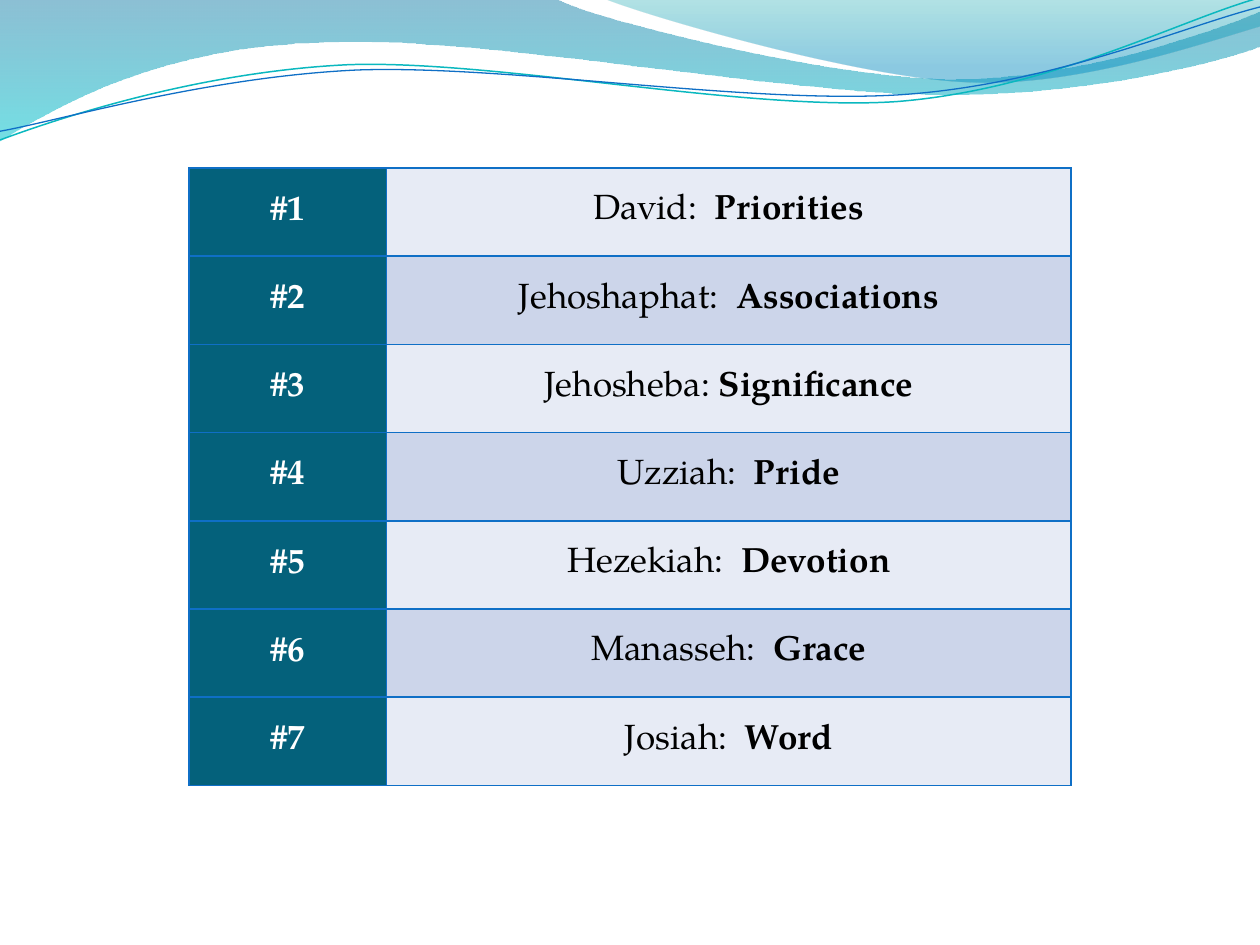
"""Builds a slide with a table of kings and lessons under a wave banner."""
from lxml import etree
from pptx import Presentation
from pptx import util as u
from pptx.dml.color import RGBColor
from pptx.enum import text
from pptx.oxml.ns import qn

FONT = "TeX Gyre Pagella"
COLORS = {
    "white": "FFFFFF", "black": "000000", "border": "0F6FC6",
    "number": "04617B", "light": "E7EBF5", "dark": "CCD5EA",
    "wave_top": "0074A1", "wave_bottom": "00C6CF",
    "crest_top": "00A1A9", "crest_bottom": "008BBF", "teal": "0AB8BF",
}
LESSONS = [
    ("David:  ", "Priorities"), ("Jehoshaphat:  ", "Associations"),
    ("Jehosheba: ", "Significance"), ("Uzziah:  ", "Pride"),
    ("Hezekiah:  ", "Devotion"), ("Manasseh:  ", "Grace"),
    ("Josiah:", "  Word"),
]
WAVE = [
    (0, 0), (317, -1), (343, 12, 478, 45, 546, 45), (614, 45, 690, 19, 720, 6.5),
    (721, 26), (708, 32, 626, 55, 537, 54), (447, 54, 275, 20, 185, 24),
    (93, 26, 33, 60, -1, 81), (0, 0),
]
CREST = [
    (345, -1), (366, 8, 491, 45, 554, 47), (616, 50, 692, 23, 720, 15),
    (720, 0), (345, -1),
]
TEAL_LINE = [
    (-1.4, 63), (34, 51.7, 114.3, 29.4, 199.4, 29.4),
    (284.4, 30.5, 426, 67.2, 512, 65.2), (599.3, 62.3, 676, 26, 720.6, 15.9),
]
BLUE_LINE = [
    (-1.1, 58), (33, 53.6, 118.2, 32.6, 204.3, 32.7),
    (290.3, 33.7, 429, 63.3, 515.3, 61.4), (601.5, 59.4, 677, 30, 721.4, 21),
]


def color(name):
    """Return the named colour."""
    return RGBColor.from_string(COLORS[name])


def add_outline(slide, segments, close):
    """Add a freeform whose segments are points or cubic curves to a point."""
    start, *ends = [(u.Pt(segment[-2]), u.Pt(segment[-1])) for segment in segments]
    builder = slide.shapes.build_freeform(*start)
    builder.add_line_segments(ends, close=close)
    shape = builder.convert_to_shape()
    shape.shadow.inherit = False
    lines = list(shape.element.spPr.iter(qn("a:lnTo")))
    for line, segment in zip(lines, segments[1:]):
        if len(segment) == 2:
            continue
        curve = etree.Element(qn("a:cubicBezTo"))
        for x, y in zip(segment[::2], segment[1::2]):
            etree.SubElement(curve, qn("a:pt"), x=str(u.Pt(x) - shape.left),
                             y=str(u.Pt(y) - shape.top))
        line.getparent().replace(line, curve)
    return shape


def add_wave(slide, segments, stops):
    """Add a translucent shape shaded downwards by (position, colour, alpha) stops."""
    shape = add_outline(slide, segments, close=True)
    shape.line.fill.background()
    shape.fill.gradient()
    shape.fill.gradient_angle = 270
    for stop, (position, name, _) in zip(shape.fill.gradient_stops, stops):
        stop.position = position
        stop.color.rgb = color(name)
    tints = shape.element.spPr.iter(qn("a:srgbClr"))
    for tint, (_, _, alpha) in zip(tints, stops):
        etree.SubElement(tint, qn("a:alpha"), val=str(alpha * 1000))


def add_curve(slide, segments, name, width):
    """Add an open curved line, tilted slightly upwards."""
    shape = add_outline(slide, segments, close=False)
    shape.rotation = 357.3
    shape.fill.background()
    shape.line.color.rgb = color(name)
    shape.line.width = u.Pt(width)


def add_borders(cell):
    """Draw a thin border on every side of a cell."""
    properties = cell._tc.get_or_add_tcPr()
    for side in ("a:lnL", "a:lnR", "a:lnT", "a:lnB"):
        line = etree.SubElement(properties, qn(side), w=str(u.Pt(1)))
        fill = etree.SubElement(line, qn("a:solidFill"))
        etree.SubElement(fill, qn("a:srgbClr"), val=COLORS["border"])


def fill_cell(cell, runs, fill, font_color):
    """Write (wording, bold) runs into a centred, filled and bordered cell."""
    add_borders(cell)
    cell.fill.solid()
    cell.fill.fore_color.rgb = color(fill)
    cell.vertical_anchor = text.MSO_ANCHOR.MIDDLE
    paragraph = cell.text_frame.paragraphs[0]
    paragraph.alignment = text.PP_ALIGN.CENTER
    paragraph.font.name = FONT
    paragraph.font.size = u.Pt(20)
    paragraph.font.color.rgb = color(font_color)
    for wording, bold in runs:
        run = paragraph.add_run()
        run.text = wording
        run.font.bold = bold


def add_lessons(slide):
    """Add the numbered table of lessons."""
    row_height = 50.4
    table = slide.shapes.add_table(
        len(LESSONS), 2, u.Pt(108), u.Pt(96), u.Pt(504),
        u.Pt(row_height * len(LESSONS))).table
    table.first_row = table.horz_banding = False
    for column, width in zip(table.columns, (113, 391)):
        column.width = u.Pt(width)
    for index, (person, lesson) in enumerate(LESSONS):
        table.rows[index].height = u.Pt(row_height)
        fill_cell(table.cell(index, 0), [(f"#{index + 1}", True)], "number", "white")
        fill_cell(table.cell(index, 1), [(person, False), (lesson, True)],
                  ("light", "dark")[index % 2], "black")


def main():
    """Build and save the slide."""
    presentation = Presentation()
    presentation.slide_width, presentation.slide_height = u.Pt(720), u.Pt(540)
    slide = presentation.slides.add_slide(presentation.slide_layouts[6])
    add_wave(slide, WAVE, [(0, "wave_top", 45), (1, "wave_bottom", 55)])
    add_wave(slide, CREST, [(0, "crest_top", 30), (0.8, "crest_bottom", 45)])
    add_curve(slide, TEAL_LINE, "teal", 0.85)
    add_curve(slide, BLUE_LINE, "border", 0.75)
    add_lessons(slide)
    presentation.save("out.pptx")


if __name__ == "__main__":
    main()
